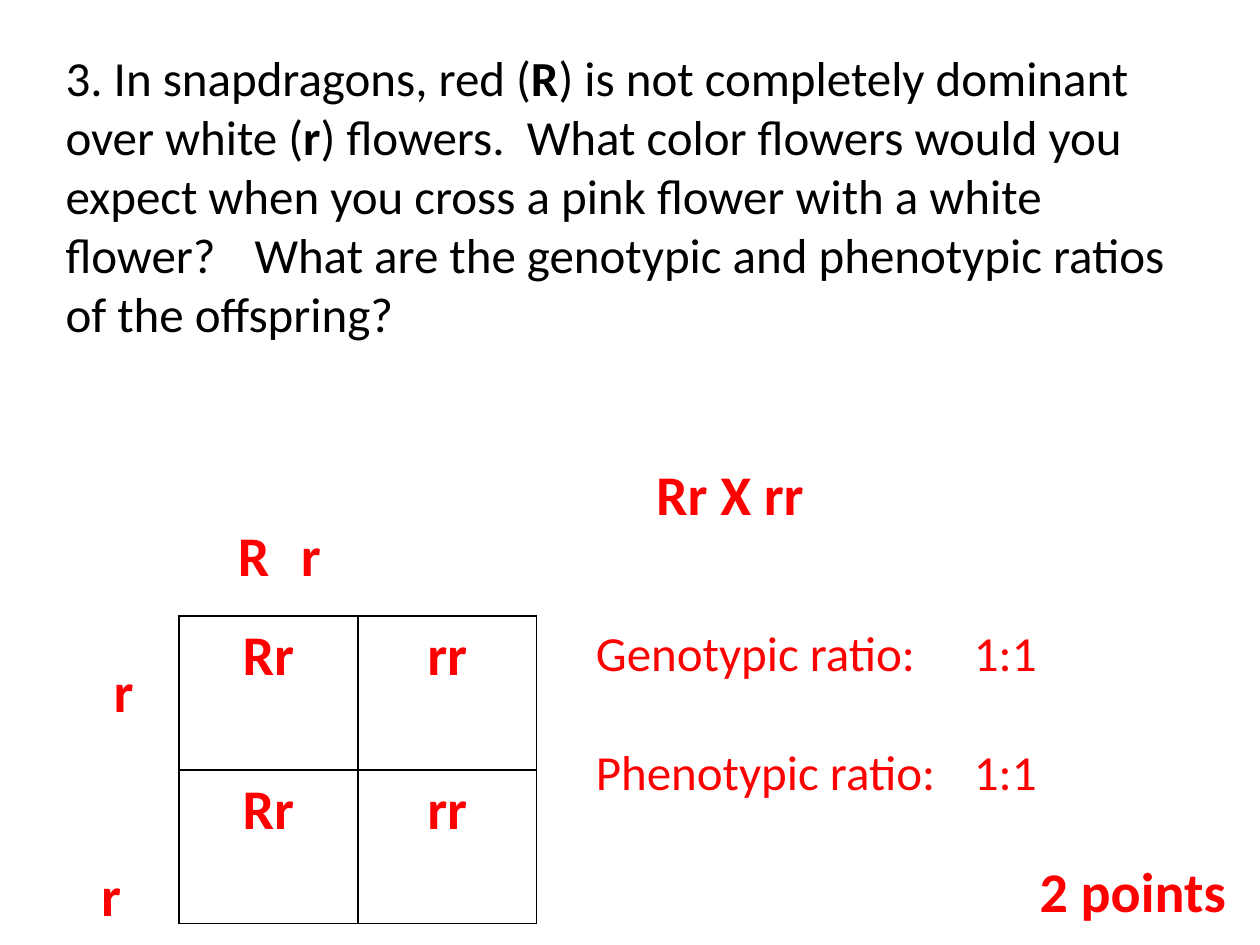
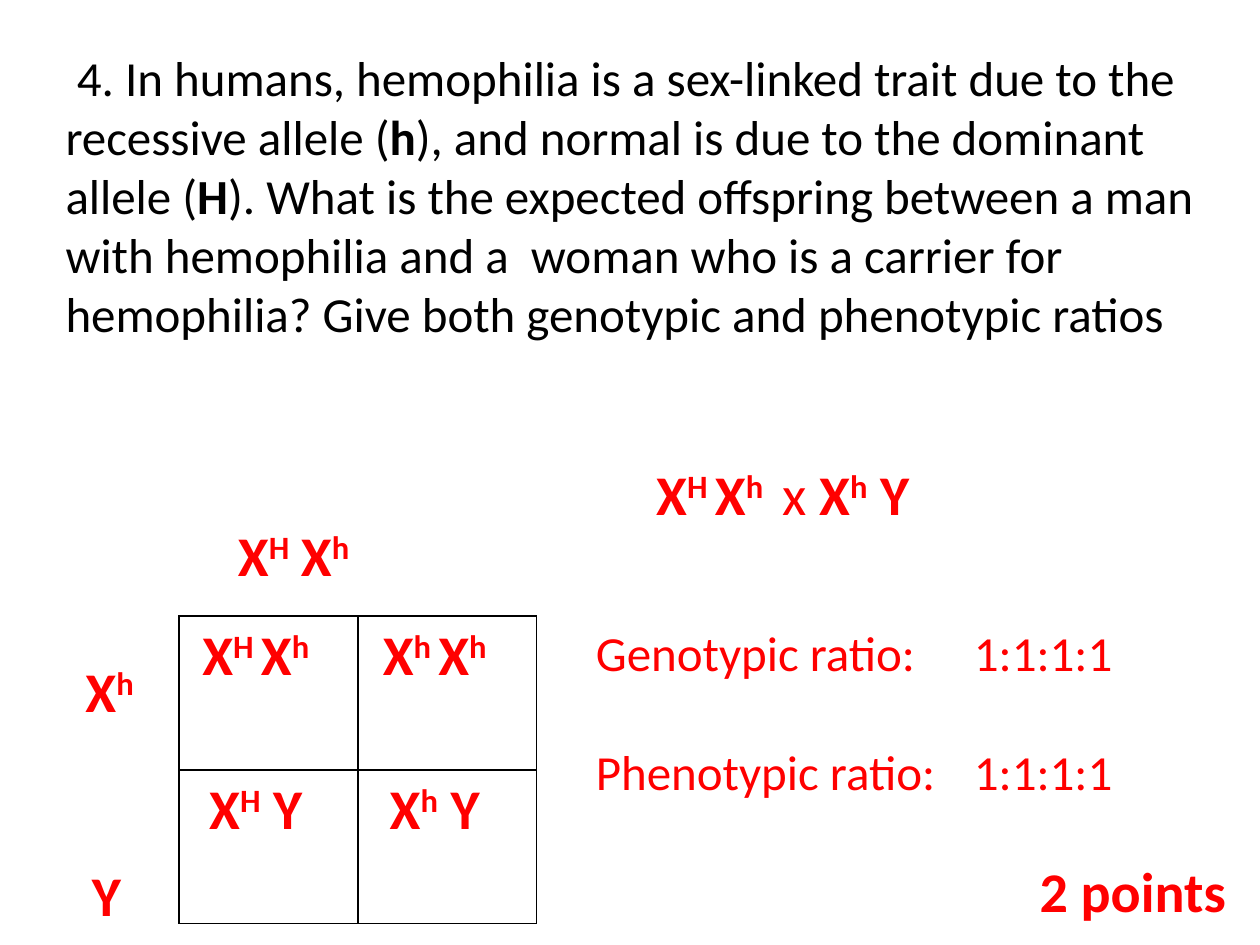
from dataclasses import dataclass
from itertools import product

from lxml.etree import SubElement
from pptx import Presentation
from pptx.dml.color import RGBColor
from pptx.enum.text import MSO_ANCHOR, MSO_AUTO_SIZE, PP_ALIGN
from pptx.oxml.ns import qn
from pptx.util import Inches, Length, Pt


@dataclass(frozen=True)
class Theme:
    font: str = "Calibri"
    ink: RGBColor = RGBColor(0x00, 0x00, 0x00)
    answer: RGBColor = RGBColor(0xFF, 0x00, 0x00)
    paper: RGBColor = RGBColor(0xFF, 0xFF, 0xFF)
    text_size: Length = Pt(28)
    allele_size: Length = Pt(32)
    superscript: str = "30000"
    border: Length = Pt(1)


THEME = Theme()


@dataclass(frozen=True)
class Style:
    size: Length
    color: RGBColor
    bold: bool = False


QUESTION = Style(THEME.text_size, THEME.ink)
RATIO = Style(THEME.text_size, THEME.answer)
ALLELE = Style(THEME.allele_size, THEME.answer, bold=True)


@dataclass(frozen=True)
class Box:
    left: float
    top: float
    width: float
    height: float

    def lengths(self) -> tuple[Length, ...]:
        return tuple(Inches(n) for n in (self.left, self.top, self.width, self.height))


QUESTION_BOX = Box(0.42, 0.33, 9.17, 2.46)
POINTS_BOX = Box(7.58, 6.75, 2.25, 0.64)
SQUARE_BOX = Box(1.42, 4.89, 2.84, 2.44)
CROSS_BOX = Box(5.11, 3.6, 3.55, 0.64)
COLUMN_BOX = Box(1.79, 4.08, 2.47, 0.64)
ROW_BOX = Box(0.33, 5.16, 0.83, 1.9)
RATIO_BOX = Box(4.63, 4.89, 5.02, 1.51)


@dataclass(frozen=True)
class Line:
    """One paragraph; *stars* switch bold and ^carets^ switch superscript."""
    marked: str
    align: PP_ALIGN = PP_ALIGN.LEFT
    tab: float = 0
    first_indent: float = 0
    right_indent: float = 0
    space_before: float = 0


@dataclass(frozen=True)
class Problem:
    question: Line
    cross: Line
    columns: tuple[str, str]
    rows: tuple[str, str]
    offspring: tuple[tuple[str, str], tuple[str, str]]
    ratio: str
    cell_right: float = 0.1


PROBLEMS = (
    Problem(
        question=Line(
            "3. In snapdragons, red (*R*) is not completely dominant over white (*r*) "
            "flowers.  What color flowers would you expect when you cross a pink flower "
            "with a white flower?\tWhat are the genotypic and phenotypic ratios of the "
            "offspring?", tab=1.55),
        cross=Line("Rr X rr"),
        columns=("R", "r"),
        rows=("r", "r"),
        offspring=(("Rr", "rr"), ("Rr", "rr")),
        ratio="1:1",
    ),
    Problem(
        question=Line(
            "4. In humans, hemophilia is a sex-linked trait due to the recessive allele "
            "(*h*), and normal is due to the dominant allele (*H*). What is the expected "
            "offspring between a man with hemophilia and a  woman who is a carrier for "
            "hemophilia? Give both genotypic and phenotypic ratios", first_indent=0.09),
        cross=Line("X^H ^X^h^*\tx *X^h^ Y", tab=1.17),
        columns=("X^H^", "X^h^"),
        rows=("X^h^", "Y"),
        offspring=(("X^H ^X^h^", "X^h ^X^h^"), ("X^H^ Y", "X^h^ Y")),
        ratio="1:1:1:1",
        cell_right=0.3,
    ),
)


def add_marked_runs(paragraph, marked: str, style: Style) -> None:
    bold = style.bold
    for bold_index, bold_part in enumerate(marked.split("*")):
        bold = style.bold != (bold_index % 2 == 1)
        for index, text in enumerate(bold_part.split("^")):
            if not text:
                continue
            run = paragraph.add_run()
            run.text = text
            run.font.name = THEME.font
            run.font.size = style.size
            run.font.bold = bold
            run.font.color.rgb = style.color
            if index % 2:
                run.font._element.set("baseline", THEME.superscript)


def write_line(paragraph, line: Line, style: Style) -> None:
    paragraph.alignment = line.align
    paragraph.space_before = Pt(line.space_before)
    properties = paragraph._p.get_or_add_pPr()
    properties.set("marL", "0")
    properties.set("marR", str(Inches(line.right_indent)))
    properties.set("indent", str(Inches(line.first_indent)))
    SubElement(properties, qn("a:buNone"))
    if line.tab:
        tabs = SubElement(properties, qn("a:tabLst"))
        SubElement(tabs, qn("a:tab"), pos=str(Inches(line.tab)), algn="l")
    add_marked_runs(paragraph, line.marked, style)


def fill_text(shape, box: Box, lines: list[Line], style: Style) -> None:
    shape.left, shape.top, shape.width, shape.height = box.lengths()
    frame = shape.text_frame
    frame.word_wrap = True
    frame.auto_size = MSO_AUTO_SIZE.NONE
    frame.vertical_anchor = MSO_ANCHOR.TOP
    for index, line in enumerate(lines):
        paragraph = frame.add_paragraph() if index else frame.paragraphs[0]
        write_line(paragraph, line, style)


def add_text(slide, box: Box, lines: list[Line], style: Style) -> None:
    fill_text(slide.shapes.add_textbox(*box.lengths()), box, lines, style)


def add_borders(cell) -> None:
    properties = cell._tc.get_or_add_tcPr()
    for side in ("lnL", "lnR", "lnT", "lnB"):
        border = SubElement(properties, qn(f"a:{side}"), w=str(THEME.border))
        fill = SubElement(border, qn("a:solidFill"))
        SubElement(fill, qn("a:srgbClr"), val=str(THEME.ink))


def add_punnett_square(slide, problem: Problem) -> None:
    table = slide.shapes.add_table(2, 2, *SQUARE_BOX.lengths()).table
    table.first_row = False
    table.horz_banding = False
    for row, column in product(range(2), repeat=2):
        cell = table.cell(row, column)
        add_borders(cell)
        cell.fill.background()
        cell.margin_right = Inches(problem.cell_right)
        line = Line(problem.offspring[row][column], PP_ALIGN.CENTER)
        write_line(cell.text_frame.paragraphs[0], line, ALLELE)


def build_slide(presentation, problem: Problem) -> None:
    title_and_content = presentation.slide_layouts[1]
    slide = presentation.slides.add_slide(title_and_content)
    slide.background.fill.solid()
    slide.background.fill.fore_color.rgb = THEME.paper

    fill_text(slide.shapes.title, QUESTION_BOX, [problem.question], QUESTION)
    fill_text(slide.placeholders[1], RATIO_BOX, [
        Line(f"Genotypic ratio:\t{problem.ratio}", tab=2.72),
        Line(f"Phenotypic ratio:\t{problem.ratio}", tab=2.97, space_before=34.2),
    ], RATIO)
    add_text(slide, POINTS_BOX, [Line("2 points", PP_ALIGN.RIGHT)], ALLELE)
    add_punnett_square(slide, problem)
    add_text(slide, CROSS_BOX, [problem.cross], ALLELE)
    add_text(slide, COLUMN_BOX, [Line("\t".join(problem.columns), tab=1.38)], ALLELE)
    upper, lower = problem.rows
    add_text(slide, ROW_BOX, [
        Line(upper, PP_ALIGN.RIGHT),
        Line(lower, PP_ALIGN.RIGHT, right_indent=0.1, space_before=78),
    ], ALLELE)


def main() -> None:
    presentation = Presentation()
    presentation.slide_width = Inches(10)
    presentation.slide_height = Inches(7.5)
    for problem in PROBLEMS:
        build_slide(presentation, problem)
    presentation.save("out.pptx")


if __name__ == "__main__":
    main()
